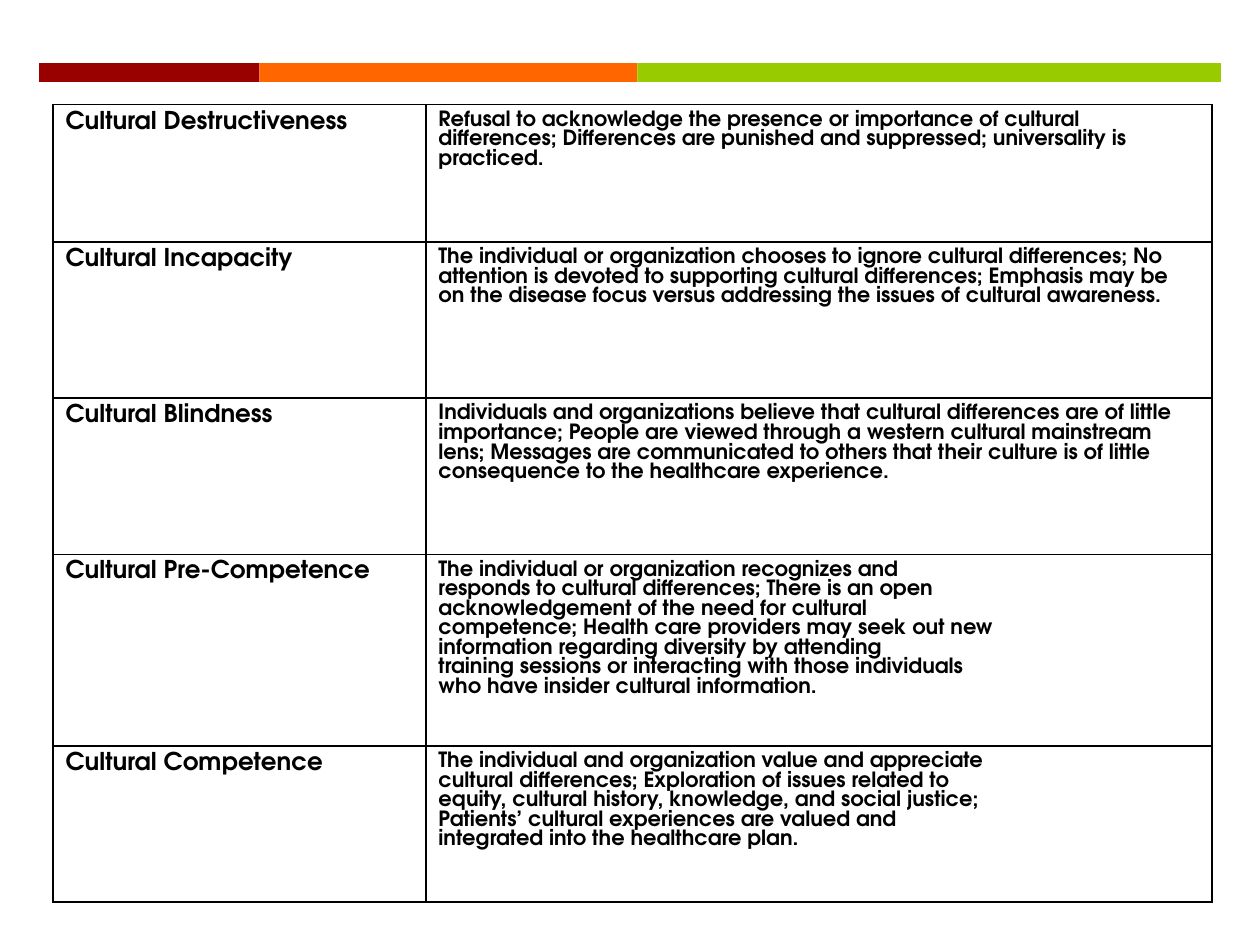
"""Build a slide with a table of five stages of cultural competence."""
from typing import NamedTuple

from lxml.etree import SubElement
from pptx import Presentation
from pptx.dml.color import RGBColor
from pptx.enum.shapes import MSO_SHAPE
from pptx.oxml.ns import qn
from pptx.util import Inches, Pt

RED = RGBColor(0x99, 0x00, 0x00)
ORANGE = RGBColor(0xFF, 0x66, 0x00)
GREEN = RGBColor(0x99, 0xCC, 0x00)
BLACK = RGBColor(0x00, 0x00, 0x00)
FONT = "TeX Gyre Adventor"
LINE_RATIO = 0.93
COL_WIDTHS = (2.96, 6.24)


class Band(NamedTuple):
    width: float
    color: RGBColor


class Stage(NamedTuple):
    name: str
    height: float
    lines: tuple[str, ...]


BANDS = (Band(1.75, RED), Band(3, ORANGE), Band(4.63, GREEN))

STAGES = (
    Stage("Cultural Destructiveness", 1.09, (
        "Refusal to acknowledge the presence or importance of cultural differences; "
        "Differences are punished and suppressed; universality is practiced.",
    )),
    Stage("Cultural Incapacity", 1.24, (
        "The individual or organization chooses to ignore cultural differences; "
        "No attention is devoted to supporting cultural differences; "
        "Emphasis may be on the disease focus versus addressing the issues of "
        "cultural awareness.",
    )),
    Stage("Cultural Blindness", 1.24, (
        "Individuals and organizations believe that cultural differences are of "
        "little importance; People are viewed through a western cultural mainstream "
        "lens; Messages are communicated to others that their culture is of little "
        "consequence to the healthcare experience.",
    )),
    Stage("Cultural Pre-Competence", 1.52, (
        "The individual or organization recognizes and",
        "responds to cultural differences; There is an open",
        "acknowledgement of the need for cultural",
        "competence; Health care providers may seek out new",
        "information regarding diversity by attending",
        "training sessions or interacting with those individuals",
        "who have insider cultural information.",
    )),
    Stage("Cultural Competence", 1.24, (
        "The individual and organization value and appreciate",
        "cultural differences; Exploration of issues related to",
        "equity, cultural history, knowledge, and social justice;",
        "Patients’ cultural experiences are valued and",
        "integrated into the healthcare plan.",
    )),
)


def add_bands(s, left: float, top: float, height: float) -> None:
    for band in BANDS:
        sp = s.shapes.add_shape(MSO_SHAPE.RECTANGLE, Inches(left), Inches(top),
                                Inches(band.width), Inches(height))
        sp.shadow.inherit = False
        sp.fill.solid()
        sp.fill.fore_color.rgb = band.color
        sp.line.fill.background()
        left += band.width


def set_borders(cell) -> None:
    tc_pr = cell._tc.get_or_add_tcPr()
    for i, side in enumerate(("a:lnL", "a:lnR", "a:lnT", "a:lnB")):
        ln = SubElement(tc_pr, qn(side), w=str(Pt(1)))
        fill = SubElement(ln, qn("a:solidFill"))
        SubElement(fill, qn("a:srgbClr"), val=str(BLACK))
        tc_pr.insert(i, ln)


def fill_cell(cell, lines: tuple[str, ...], size: int) -> None:
    cell.fill.background()
    set_borders(cell)
    tf = cell.text_frame
    for i, line in enumerate(lines):
        p = tf.add_paragraph() if i else tf.paragraphs[0]
        p.line_spacing = Pt(size * LINE_RATIO)
        r = p.add_run()
        r.text = line
        r.font.name = FONT
        r.font.size = Pt(size)
        r.font.bold = True
        r.font.color.rgb = BLACK


def add_stage_table(s, left: float, top: float) -> None:
    height = sum(stage.height for stage in STAGES)
    table = s.shapes.add_table(len(STAGES), len(COL_WIDTHS), Inches(left), Inches(top),
                               Inches(sum(COL_WIDTHS)), Inches(height)).table
    table.first_row = False
    table.horz_banding = False
    for col, width in zip(table.columns, COL_WIDTHS):
        col.width = Inches(width)
    for row, stage in zip(table.rows, STAGES):
        row.height = Inches(stage.height)
        fill_cell(row.cells[0], (stage.name,), 14)
        fill_cell(row.cells[1], stage.lines, 12)


def main() -> None:
    prs = Presentation()
    prs.slide_width, prs.slide_height = Inches(10), Inches(7.5)
    s = prs.slides.add_slide(prs.slide_layouts[6])
    add_bands(s, 0.31, 0.5, 0.15)
    add_stage_table(s, 0.42, 0.83)
    prs.save("out.pptx")


if __name__ == "__main__":
    main()
